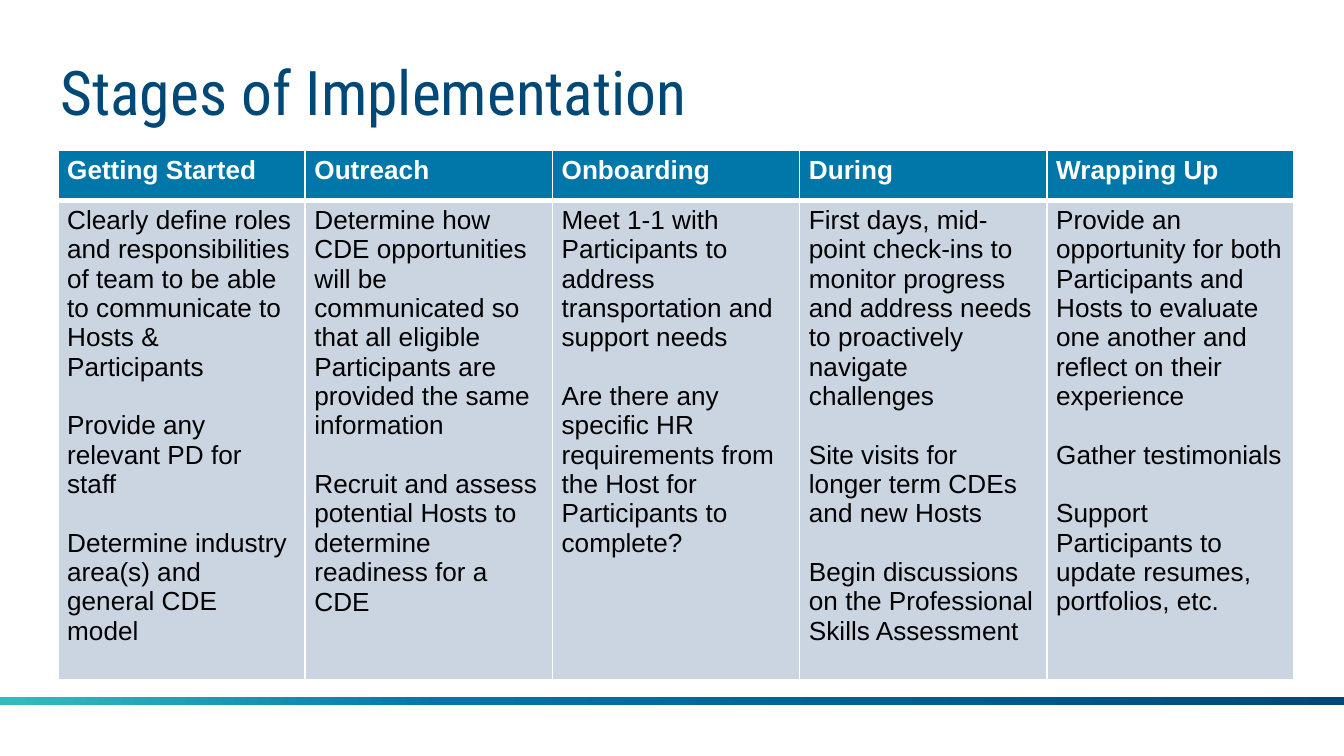
from copy import deepcopy

from lxml import etree
from pptx import Presentation
from pptx.dml.color import RGBColor
from pptx.enum.shapes import MSO_SHAPE
from pptx.enum.text import MSO_ANCHOR, PP_ALIGN
from pptx.oxml.ns import qn
from pptx.util import Inches, Pt

LEFT, MIDDLE, TOP = PP_ALIGN.LEFT, MSO_ANCHOR.MIDDLE, MSO_ANCHOR.TOP
RECTANGLE = MSO_SHAPE.RECTANGLE

NAVY, BLUE, TEAL = "004876", "0077A8", "30BEBC"
PALE, WHITE, BLACK = "CAD5E1", "FFFFFF", "000000"
COLUMN_WIDTH, HEADER_HEIGHT, BODY_HEIGHT = 1.84, 0.37, 3.57
PARAGRAPH_GAP = 15.7  # one line of 14 pt text

STAGES = {
    "Getting Started": [
        "Clearly define roles and responsibilities of team to be able to communicate to Hosts & Participants",
        "Provide any relevant PD for staff",
        "Determine industry area(s) and general CDE model",
    ],
    "Outreach": [
        "Determine how CDE opportunities will be communicated so that all eligible Participants are provided the same information",
        "Recruit and assess potential Hosts to determine readiness for a CDE",
    ],
    "Onboarding": [
        "Meet 1-1 with Participants to address transportation and support needs",
        "Are there any specific HR requirements from the Host for Participants to complete?",
    ],
    "During": [
        "First days, mid-point check-ins to monitor progress and address needs to proactively navigate challenges",
        "Site visits for longer term CDEs and new Hosts",
        "Begin discussions on the Professional Skills Assessment",
    ],
    "Wrapping Up": [
        "Provide an opportunity for both Participants and Hosts to evaluate one another and reflect on their experience",
        "Gather testimonials",
        "Support Participants to update resumes, portfolios, etc.",
    ],
}


def color(value):
    return RGBColor.from_string(value)


def write(frame, *texts, font="Arial", size=14, fill=BLACK, bold=False, gap=0, spacing=1.0):
    for index, text in enumerate(texts):
        paragraph = frame.paragraphs[0] if index == 0 else frame.add_paragraph()
        paragraph.alignment = LEFT
        paragraph.line_spacing = spacing
        paragraph.space_before = Pt(gap if index else 0)
        run = paragraph.add_run()
        run.text = text
        run.font.name, run.font.size, run.font.bold = font, Pt(size), bold
        run.font.color.rgb = color(fill)


presentation = Presentation()
presentation.slide_width = Inches(10)
presentation.slide_height = Inches(10 * 9 / 16)
slide = presentation.slides.add_slide(presentation.slide_layouts[5])

# Gradient stripe near the bottom edge
stripe = slide.shapes.add_shape(RECTANGLE, 0, Inches(5.19), presentation.slide_width, Inches(0.06))
stripe.shadow.inherit = False
stripe.line.fill.background()
stripe.fill.gradient()
stripe.fill.gradient_angle = 0
stop_list = stripe._element.spPr.find(qn("a:gradFill")).find(qn("a:gsLst"))
stop_list.insert(1, deepcopy(stop_list[0]))
for stop, position, value in zip(stripe.fill.gradient_stops, (0, 0.33, 1), (TEAL, BLUE, NAVY)):
    stop.position = position
    stop.color.rgb = color(value)

# Title
title = slide.shapes.title
title.left, title.top, title.width, title.height = map(Inches, (0.38, 0.3, 9.25, 0.82))
frame = title.text_frame
frame.word_wrap = True
frame.vertical_anchor = MIDDLE
frame.margin_left = frame.margin_right = Inches(0.07)
frame.margin_top = frame.margin_bottom = Inches(0.04)
write(frame, "Stages of Implementation", font="Roboto Condensed", size=33, fill=NAVY, spacing=0.9)

# Stages table: one column per stage
table = slide.shapes.add_table(
    2, len(STAGES), Inches(0.43), Inches(1.12),
    Inches(COLUMN_WIDTH * len(STAGES)), Inches(HEADER_HEIGHT + BODY_HEIGHT),
).table
table.rows[0].height, table.rows[1].height = Inches(HEADER_HEIGHT), Inches(BODY_HEIGHT)

for column, (stage, steps) in enumerate(STAGES.items()):
    table.columns[column].width = Inches(COLUMN_WIDTH)
    header, body = table.cell(0, column), table.cell(1, column)
    write(header.text_frame, stage, fill=WHITE, bold=True)
    write(body.text_frame, *steps, gap=PARAGRAPH_GAP)

    for cell, background, top, bottom in ((header, BLUE, 1, 3), (body, PALE, 3, 1)):
        cell.vertical_anchor = TOP
        cell.margin_left = cell.margin_right = Inches(0.07)
        cell.margin_top = cell.margin_bottom = Inches(0.04)
        properties = cell._tc.get_or_add_tcPr()
        for side, width in (("L", 1), ("R", 1), ("T", top), ("B", bottom)):
            border = etree.SubElement(properties, qn(f"a:ln{side}"), w=str(Pt(width)))
            solid = etree.SubElement(border, qn("a:solidFill"))
            etree.SubElement(solid, qn("a:srgbClr"), val=WHITE)
        cell.fill.solid()
        cell.fill.fore_color.rgb = color(background)

presentation.save("out.pptx")
